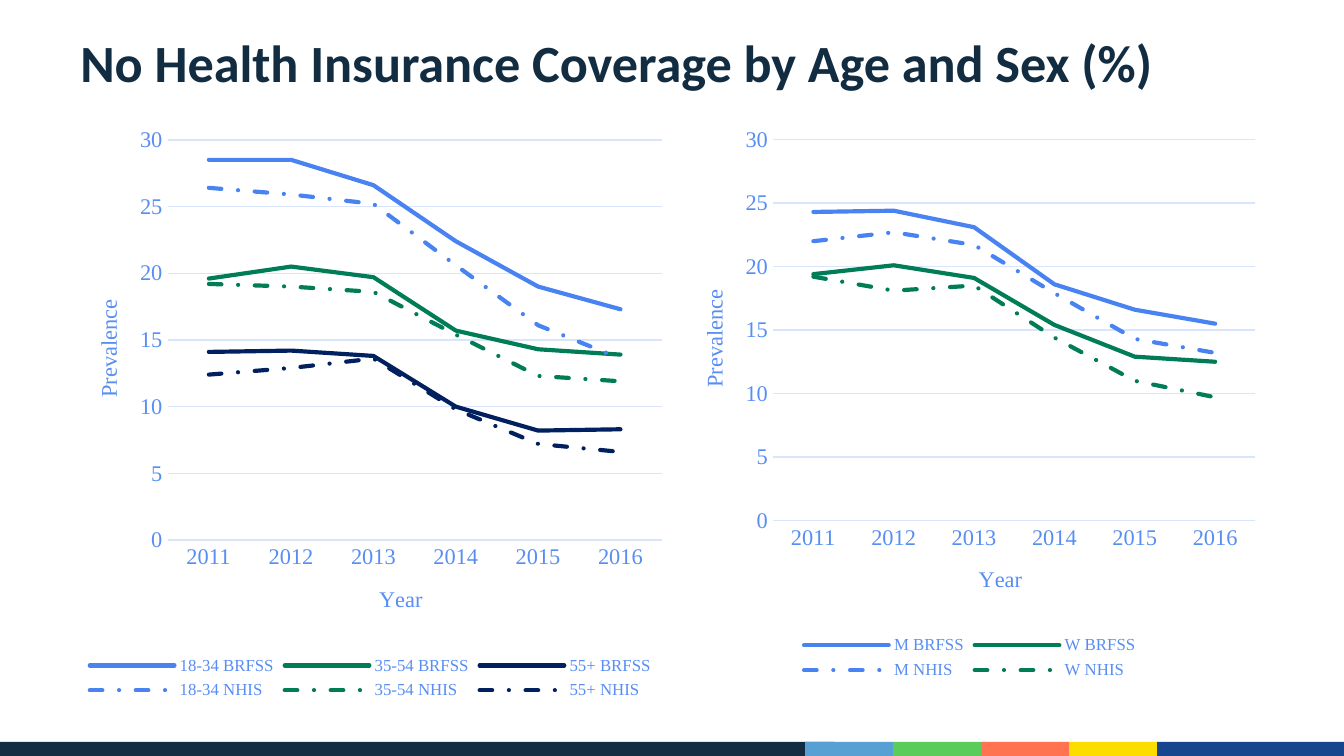
from lxml import etree
from pptx import Presentation
from pptx.chart.data import CategoryChartData
from pptx.dml.color import RGBColor
from pptx.enum.chart import XL_CHART_TYPE as ChartType, XL_LEGEND_POSITION as LegendPosition
from pptx.enum.chart import XL_MARKER_STYLE as Marker, XL_TICK_MARK as TickMark
from pptx.enum.dml import MSO_LINE_DASH_STYLE as Dash
from pptx.enum.shapes import MSO_SHAPE as Shape
from pptx.enum.text import MSO_ANCHOR as Anchor
from pptx.oxml.ns import qn
from pptx.util import Inches, Pt

COLORS = {
    "navy": "122C41", "sky": "56A0D3", "green": "5ACC5A", "coral": "FF7351",
    "yellow": "FDDC00", "royal": "17468F", "label": "588EF4", "grid": "D8E5FC",
    "line_blue": "4983F2", "line_green": "007D57", "line_navy": "002060",
}
SERIES_COLORS = ["line_blue", "line_green", "line_navy"]
YEARS = [str(year) for year in range(2011, 2017)]
AGE_PREVALENCE = {
    "18-34 BRFSS": [28.5, 28.5, 26.6, 22.4, 19, 17.3],
    "35-54 BRFSS": [19.6, 20.5, 19.7, 15.7, 14.3, 13.9],
    "55+ BRFSS": [14.1, 14.2, 13.8, 10, 8.2, 8.3],
    "18-34 NHIS": [26.4, 25.9, 25.2, 20.6, 16.1, 13.6],
    "35-54 NHIS": [19.2, 19, 18.6, 15.4, 12.3, 11.9],
    "55+ NHIS": [12.4, 12.9, 13.6, 9.8, 7.2, 6.6],
}
SEX_PREVALENCE = {
    "M BRFSS": [24.3, 24.4, 23.1, 18.6, 16.6, 15.5],
    "W BRFSS": [19.4, 20.1, 19.1, 15.4, 12.9, 12.5],
    "M NHIS": [22, 22.7, 21.7, 17.9, 14.3, 13.2],
    "W NHIS": [19.2, 18.1, 18.5, 14.4, 11, 9.7],
}


def rgb(name):
    return RGBColor.from_string(COLORS[name])


def style_font(font, color, **values):
    for key, value in values.items():
        setattr(font, key, value)
    font.color.rgb = rgb(color)


def style_line(line, color, width):
    line.color.rgb = rgb(color)
    line.width = Pt(width)


def add_band(slide, left, width, color):
    """Add one colored segment of the footer strip."""
    band = slide.shapes.add_shape(
        Shape.RECTANGLE, Inches(left), Inches(5.52), Inches(width), Inches(0.11))
    band.shadow.inherit = False
    band.fill.solid()
    band.fill.fore_color.rgb = rgb(color)
    band.line.fill.background()


def add_title(slide, text):
    title = slide.shapes.add_textbox(Inches(0.5), Inches(0.23), Inches(9), Inches(0.94))
    frame = title.text_frame
    frame.word_wrap = True
    frame.vertical_anchor = Anchor.TOP
    heading = frame.paragraphs[0]
    heading.line_spacing = Pt(30)
    run = heading.add_run()
    run.text = text
    style_font(run.font, "navy", name="Calibri", size=Pt(28), bold=True)


def style_axis(axis, title):
    axis.major_tick_mark = axis.minor_tick_mark = TickMark.NONE
    label_format = {"name": "Times New Roman", "size": Pt(12), "bold": False}
    style_font(axis.tick_labels.font, "label", **label_format)
    axis.axis_title.text_frame.text = title
    title_run = axis.axis_title.text_frame.paragraphs[0].runs[0]
    style_font(title_run.font, "label", **label_format)


def set_plot_area(chart, **fractions):
    """Fix the inner plot area as fractions of the chart."""
    plot_area = chart._chartSpace.chart.plotArea
    layout = plot_area.find(qn("c:layout"))
    if layout is None:
        layout = etree.Element(qn("c:layout"))
        plot_area.insert(0, layout)
    manual = etree.SubElement(layout, qn("c:manualLayout"))
    settings = {"layoutTarget": "inner", "xMode": "edge", "yMode": "edge", **fractions}
    for tag, value in settings.items():
        etree.SubElement(manual, qn(f"c:{tag}")).set("val", str(value))


def style_series(series, color, dashed):
    series.smooth = False
    series.marker.style = Marker.NONE
    line = series.format.line
    style_line(line, color, 2.25)
    if dashed:
        line.dash_style = Dash.DASH_DOT
    series._element.find(qn("c:spPr")).find(qn("a:ln")).set("cap", "rnd")


def add_prevalence_chart(slide, box, prevalence, plot_area):
    chart_data = CategoryChartData()
    chart_data.categories = YEARS
    for name, values in prevalence.items():
        chart_data.add_series(name, values)
    chart = slide.shapes.add_chart(
        ChartType.LINE, *[Inches(length) for length in box], chart_data).chart
    chart.has_title = False
    style_font(chart.font, "label", name="Times New Roman", size=Pt(12))
    chart.plots[0].vary_by_categories = False

    style_axis(chart.category_axis, "Year")
    style_line(chart.category_axis.format.line, "grid", 0.75)
    value_axis = chart.value_axis
    style_axis(value_axis, "Prevalence")
    for key, value in {"minimum_scale": 0, "maximum_scale": 30, "major_unit": 5}.items():
        setattr(value_axis, key, value)
    value_axis.format.line.fill.background()
    style_line(value_axis.major_gridlines.format.line, "grid", 0.75)

    group_count = len(prevalence) // 2
    for index, series in enumerate(chart.plots[0].series):
        style_series(series, SERIES_COLORS[index % group_count], index >= group_count)

    chart.has_legend = True
    chart.legend.position = LegendPosition.BOTTOM
    chart.legend.include_in_layout = False
    style_font(chart.legend.font, "label", name="Times New Roman", size=Pt(9))
    set_plot_area(chart, **plot_area)


def main():
    deck = Presentation()
    # A 16:9 page, 10 inches wide
    deck.slide_width, deck.slide_height = Inches(10), Inches(10 * 9 / 16)
    slide = deck.slides.add_slide(deck.slide_layouts[6])

    add_band(slide, 0, 6.21, "navy")
    for index, color in enumerate(["sky", "green", "coral", "yellow"]):
        add_band(slide, 5.99 + 0.655 * index, 0.66, color)
    add_band(slide, 8.61, 1.39, "royal")

    add_title(slide, "No Health Insurance Coverage by Age and Sex (%)")
    add_prevalence_chart(slide, (0.5, 0.87, 4.51, 4.38), AGE_PREVALENCE,
                         {"x": 0.166, "y": 0.039, "w": 0.815, "h": 0.68})
    add_prevalence_chart(slide, (5, 0.87, 4.43, 4.23), SEX_PREVALENCE,
                         {"x": 0.17, "y": 0.04, "w": 0.81, "h": 0.67})
    deck.save("out.pptx")


if __name__ == "__main__":
    main()
